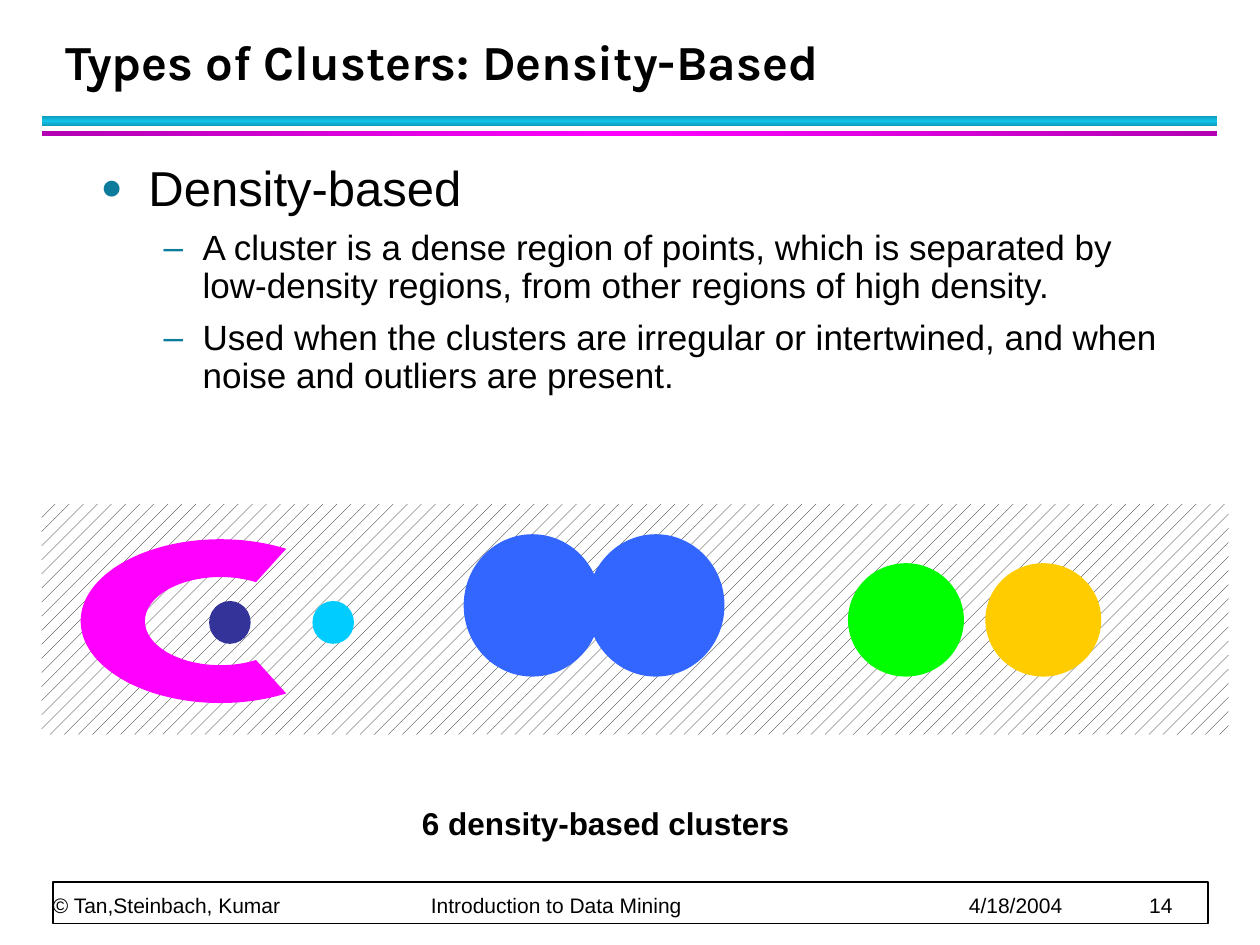
from copy import deepcopy
from math import cos, radians, sin, tan

from lxml import etree
from pptx import Presentation
from pptx.dml.color import RGBColor
from pptx.enum.dml import MSO_PATTERN
from pptx.enum.shapes import MSO_SHAPE
from pptx.enum.text import MSO_ANCHOR
from pptx.oxml.ns import qn
from pptx.util import Inches, Pt

RECT, OVAL = MSO_SHAPE.RECTANGLE, MSO_SHAPE.OVAL
TOP, BOTTOM = MSO_ANCHOR.TOP, MSO_ANCHOR.BOTTOM
DOTS = MSO_PATTERN.PERCENT_10
W, H = 10, 7.5
EDGE = 0.42

TITLE = "Types of Clusters: Density-Based"
BODY = [
    (0, "Density-based"),
    (1, "A cluster is a dense region of points, which is separated by "
        "low-density regions, from other regions of high density."),
    (1, "Used when the clusters are irregular or intertwined, and when "
        "noise and outliers are present."),
]
LEVELS = [
    {"size": 28, "left": 0.38, "hang": 0.38, "mark": "●", "share": 75},
    {"size": 20, "left": 0.81, "hang": 0.31, "mark": "–", "share": 100},
]
CAPTION = "6 density-based clusters"
FOOT = ["© Tan,Steinbach, Kumar", "Introduction to Data Mining", "4/18/2004", "14"]
TABS = [3, 7.27, 8.7]
BARS = [
    (0.92, 0.08, ["0E9BBA", "12C2E9", "0E9BBA"], 90),
    (1.04, 0.04, ["B200B2", "FF00FF", "B200B2"], 0),
]
DISCS = [
    (4.77, 0.33, 0.34, [(1.66, "333399"), (2.48, "00CCFF")]),
    (4.47, 0.92, 0.9, [(6.73, "00FF00"), (7.82, "FFCC00")]),
    (4.24, 1.09, 1.13, [(3.68, "3366FF"), (4.66, "3366FF")]),
]
RING = {"x": 1.75, "y": 4.93, "outer": (1.11, 0.65), "inner": (0.6, 0.35)}
TURNS = [62, 90, 180, 270, 298]

deck = Presentation()
deck.slide_width, deck.slide_height = Inches(W), Inches(H)
slide = deck.slides.add_slide(deck.slide_layouts[6])
shapes = slide.shapes


def color(code):
    return RGBColor.from_string(code)


def paint(shape, code):
    shape.shadow.inherit = False
    shape.line.fill.background()
    if code:
        shape.fill.solid()
        shape.fill.fore_color.rgb = color(code)
    return shape


def draw(kind, box, code=None):
    return paint(shapes.add_shape(kind, *map(Inches, box)), code)


def blend(shape, codes, angle):
    fill = shape.fill
    fill.gradient()
    fill.gradient_angle = angle
    stops = shape._element.spPr.find(qn("a:gradFill")).find(qn("a:gsLst"))
    stops.append(deepcopy(stops[0]))
    for i, (stop, code) in enumerate(zip(fill.gradient_stops, codes)):
        stop.position = i / (len(codes) - 1)
        stop.color.rgb = color(code)


def frame(box, anchor=TOP, pad=(0.1, 0.05)):
    text = shapes.add_textbox(*map(Inches, box)).text_frame
    side, end = map(Inches, pad)
    form = {"word_wrap": True, "vertical_anchor": anchor, "margin_left": side,
            "margin_right": side, "margin_top": end, "margin_bottom": end}
    for key, value in form.items():
        setattr(text, key, value)
    return text


def write(para, words, size, face="Arial", bold=False, **gaps):
    run = para.add_run()
    run.text = words
    for key, value in {"name": face, "size": Pt(size), "bold": bold}.items():
        setattr(run.font, key, value)
    run.font.color.rgb = color("000000")
    for key, value in gaps.items():
        setattr(para, key, value)


def add(parent, tag, **attrs):
    node = etree.SubElement(parent, qn(tag))
    for key, value in attrs.items():
        node.set(key, str(value))
    return node


def bullet(para, level):
    props = para._p.get_or_add_pPr()
    props.set("marL", str(Inches(level["left"])))
    props.set("indent", str(-Inches(level["hang"])))
    add(add(props, "a:buClr"), "a:srgbClr", val="0C7B9C")
    add(props, "a:buSzPct", val=level["share"] * 1000)
    add(props, "a:buFont", typeface="Arial")
    add(props, "a:buChar", char=level["mark"])


def spot(radii, turn, pull=0):
    c, s = cos(radians(turn)), sin(radians(turn))
    return (Inches(RING["x"] + radii[0] * (c - pull * s)),
            Inches(RING["y"] + radii[1] * (s + pull * c)))


def arc(radii, turns):
    points = [spot(radii, turns[0])]
    for a, b in zip(turns, turns[1:]):
        pull = 4 / 3 * tan(radians(b - a) / 4)
        points += [spot(radii, a, pull), spot(radii, b, -pull), spot(radii, b)]
    return points


def bend(line, first, count):
    nodes = line.findall(qn("a:lnTo"))[first:first + 3 * count]
    for i in range(0, len(nodes), 3):
        curve = etree.Element(qn("a:cubicBezTo"))
        nodes[i].addprevious(curve)
        for node in nodes[i:i + 3]:
            curve.append(node[0])
            line.remove(node)


def ring(code):
    points = arc(RING["outer"], TURNS) + arc(RING["inner"], TURNS[::-1])
    build = shapes.build_freeform(*points[0], scale=1)
    build.add_line_segments(points[1:], close=True)
    shape = paint(build.convert_to_shape(), code)
    line = next(shape._element.iter(qn("a:moveTo"))).getparent()
    count = len(TURNS) - 1
    for first in (3 * count + 1, 0):
        bend(line, first, count)


for top, tall, codes, angle in BARS:
    blend(draw(RECT, (0.33, top, 9.33, tall)), codes, angle)

rim = draw(RECT, (EDGE, 7, 9.17, 0.33), "FFFFFF")
rim.line.color.rgb = color("000000")
rim.line.width = Pt(1)
para = frame((EDGE, 7, 9.15, 0.28), BOTTOM, (0, 0)).paragraphs[0]
write(para, "\t".join(FOOT), 12, line_spacing=Pt(20))
tabs = add(para._p.get_or_add_pPr(), "a:tabLst")
for stop in TABS:
    add(tabs, "a:tab", pos=Inches(stop), algn="l")

para = frame((EDGE, 0.17, 9.06, 0.6), BOTTOM).paragraphs[0]
write(para, TITLE, 28, "Karla", True, line_spacing=Pt(36))

text = frame((0.7, 1.25, 8.75, 5.59))
for i, (rank, words) in enumerate(BODY):
    para = text.add_paragraph() if i else text.paragraphs[0]
    level = LEVELS[rank]
    write(para, words, level["size"], line_spacing=0.9,
          space_before=Pt(level["size"] * 0.2), space_after=Pt(4))
    para.level = rank
    bullet(para, level)

field = draw(RECT, (0.33, 4, 9.42, 1.83))
field.fill.patterned()
field.fill.pattern = DOTS
field.fill.fore_color.rgb = color("000000")
field.fill.back_color.rgb = color("FFFFFF")

ring("FF00FF")
for top, wide, tall, spots in DISCS:
    for left, code in spots:
        draw(OVAL, (left, top, wide, tall), code)

para = frame((3.25, 6.33, 3.5, 0.4)).paragraphs[0]
write(para, CAPTION, 18, bold=True)

deck.save("out.pptx")
